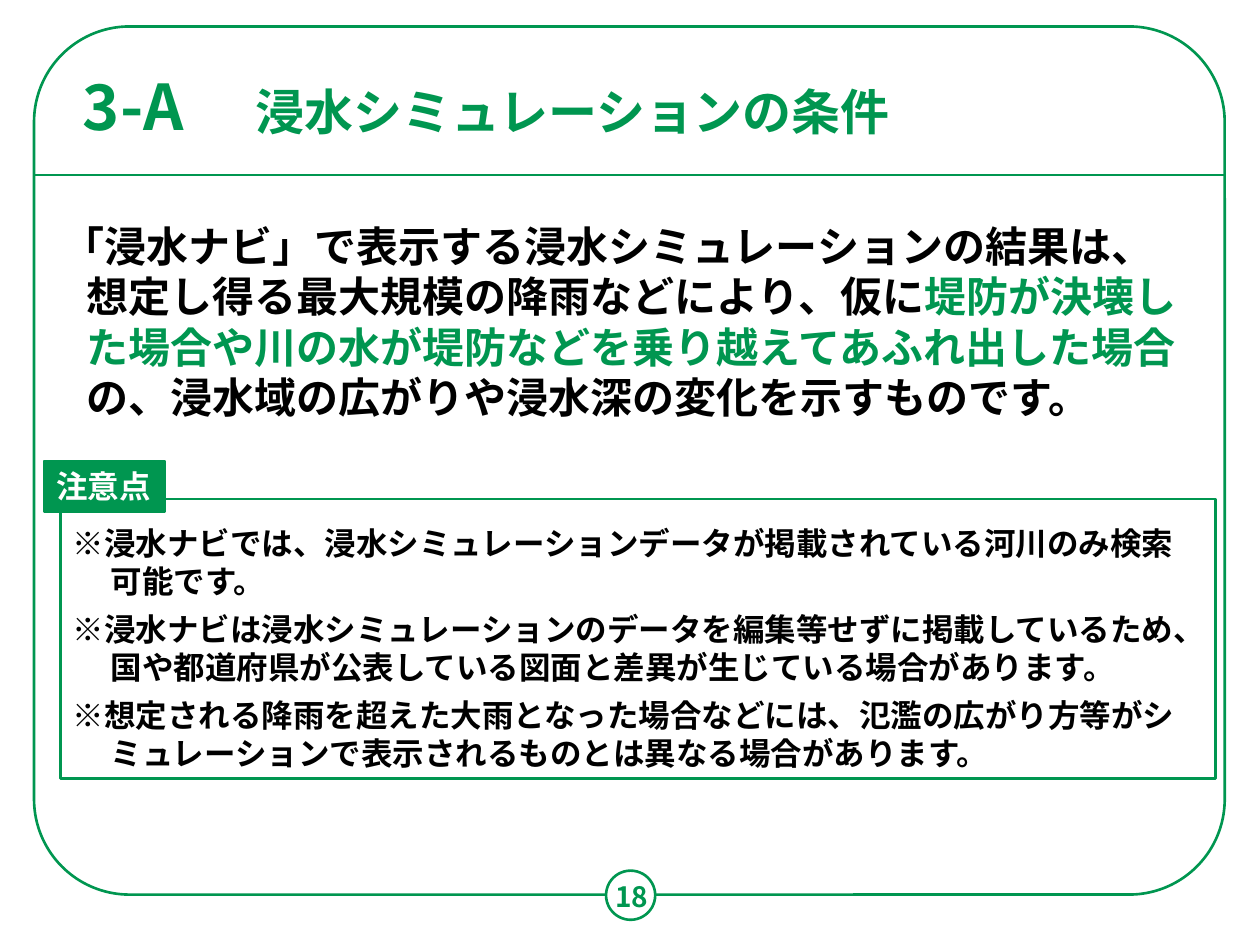
import dataclasses

import pptx
import pptx.dml.color
import pptx.enum.lang
import pptx.enum.shapes
import pptx.enum.text
import pptx.oxml.ns
import pptx.util
from pptx.util import Inches

SHAPE = pptx.enum.shapes.MSO_SHAPE
ALIGN = pptx.enum.text.PP_ALIGN
ANCHOR = pptx.enum.text.MSO_ANCHOR
qn = pptx.oxml.ns.qn


@dataclasses.dataclass(frozen=True)
class Theme:
    green: str = "009650"
    black: str = "000000"
    white: str = "FFFFFF"
    head_font: str = "Noto Sans CJK JP"
    body_font: str = "Calibri"
    number_size: int = 36
    title_size: int = 28
    body_size: int = 24
    note_size: int = 18
    page_size: int = 16
    line_width: float = 1.5


class SlideBuilder:
    def __init__(self, s, theme):
        self.s = s
        self.theme = theme

    def rgb(self, color):
        return pptx.dml.color.RGBColor.from_string(color)

    def outline(self, line):
        line.color.rgb = self.rgb(self.theme.green)
        line.width = pptx.util.Pt(self.theme.line_width)

    def shape(self, kind, x, y, w, h, fill=None):
        sp = self.s.shapes.add_shape(kind, Inches(x), Inches(y), Inches(w), Inches(h))
        sp.shadow.inherit = False
        if fill:
            sp.fill.solid()
            sp.fill.fore_color.rgb = self.rgb(fill)
        else:
            sp.fill.background()
        self.outline(sp.line)
        return sp

    def rule(self, x1, x2, y):
        cx = self.s.shapes.add_connector(
            pptx.enum.shapes.MSO_CONNECTOR.STRAIGHT,
            Inches(x1), Inches(y), Inches(x2), Inches(y))
        self.outline(cx.line)
        spPr = cx._element.spPr
        spPr.append(spPr.makeelement(qn("a:effectLst"), {}))

    def text_box(self, x, y, w, h):
        return self.s.shapes.add_textbox(Inches(x), Inches(y), Inches(w), Inches(h))

    def text(self, sp, paragraphs, size, font=None, anchor=ANCHOR.TOP, wrap=True,
             align=ALIGN.LEFT, spacing=None, gap=0):
        """Fill sp; each paragraph is (left margin, first indent, [(text, color), ...])."""
        tf = sp.text_frame
        tf.word_wrap = wrap
        tf.vertical_anchor = anchor
        for i, (margin, indent, runs) in enumerate(paragraphs):
            p = tf.add_paragraph() if i else tf.paragraphs[0]
            p.alignment = align
            if spacing:
                p.line_spacing = spacing
            if i and gap:
                p.space_before = pptx.util.Pt(gap)
            pPr = p._p.get_or_add_pPr()
            pPr.set("marL", str(Inches(margin)))
            pPr.set("indent", str(Inches(indent)))
            for words, color in runs:
                self.run(p, words, color, size, font or self.theme.body_font)

    def run(self, p, words, color, size, font):
        r = p.add_run()
        r.text = words
        r.font.size = pptx.util.Pt(size)
        r.font.bold = True
        r.font.name = font
        r.font.color.rgb = self.rgb(color)
        r.font.language_id = pptx.enum.lang.MSO_LANGUAGE_ID.JAPANESE
        rPr = r.font._element
        rPr.find(qn("a:latin")).addnext(rPr.makeelement(qn("a:ea"), {"typeface": font}))

    def heading(self, words, size, x, y, w, h, wrap=True):
        self.text(self.text_box(x, y, w, h), [(0, 0, [(words, self.theme.green)])], size,
                  font=self.theme.head_font, anchor=ANCHOR.BOTTOM, wrap=wrap, spacing=0.9)


def main():
    prs = pptx.Presentation()
    prs.slide_width, prs.slide_height = Inches(10), Inches(7.5)
    t = Theme()
    b = SlideBuilder(prs.slides.add_slide(prs.slide_layouts[6]), t)

    frame = b.shape(SHAPE.ROUNDED_RECTANGLE, 0.27, 0.21, 9.45, 6.89)
    frame.adjustments[0] = 0.11
    b.shape(SHAPE.OVAL, 4.81, 6.91, 0.39, 0.39, fill=t.white)
    b.rule(0.27, 9.72, 1.39)
    b.text(b.text_box(4.62, 6.92, 0.79, 0.39), [(0, 0, [("18", t.green)])], t.page_size,
           font=t.head_font, anchor=ANCHOR.MIDDLE, align=ALIGN.CENTER)

    b.heading("浸水シミュレーションの条件", t.title_size, 1.93, 0.63, 5.31, 0.54, wrap=False)
    b.heading("3-A", t.number_size, 0.56, 0.6, 1.38, 0.59)

    b.text(b.text_box(0.4, 1.7, 9.25, 1.72), [
        (0, 0, [("「浸水ナビ」で表示する浸水シミュレーションの結果は、", t.black)]),
        (0.19, 0, [
            ("想定し得る最大規模の降雨などにより、仮に", t.black),
            ("堤防が決壊した場合や川の水が堤防などを乗り越えてあふれ出した場合", t.green),
            ("の、浸水域の広がりや浸水深の変化を示すものです。", t.black),
        ]),
    ], t.body_size)

    notes = [
        "※浸水ナビでは、浸水シミュレーションデータが掲載されている河川のみ検索可能です。",
        "※浸水ナビは浸水シミュレーションのデータを編集等せずに掲載しているため、"
        "国や都道府県が公表している図面と差異が生じている場合があります。",
        "※想定される降雨を超えた大雨となった場合などには、氾濫の広がり方等が"
        "シミュレーションで表示されるものとは異なる場合があります。",
    ]
    note_box = b.shape(SHAPE.RECTANGLE, 0.48, 3.96, 9.17, 2.22)
    note_box.text_frame.margin_top = Inches(0.2)
    b.text(note_box, [(0.3, -0.3, [(note, t.black)]) for note in notes], t.note_size, gap=6)

    label = b.shape(SHAPE.RECTANGLE, 0.35, 3.66, 0.96, 0.4, fill=t.green)
    b.text(label, [(0, 0, [("注意点", t.white)])], t.note_size, wrap=False)

    prs.save("out.pptx")


if __name__ == "__main__":
    main()
